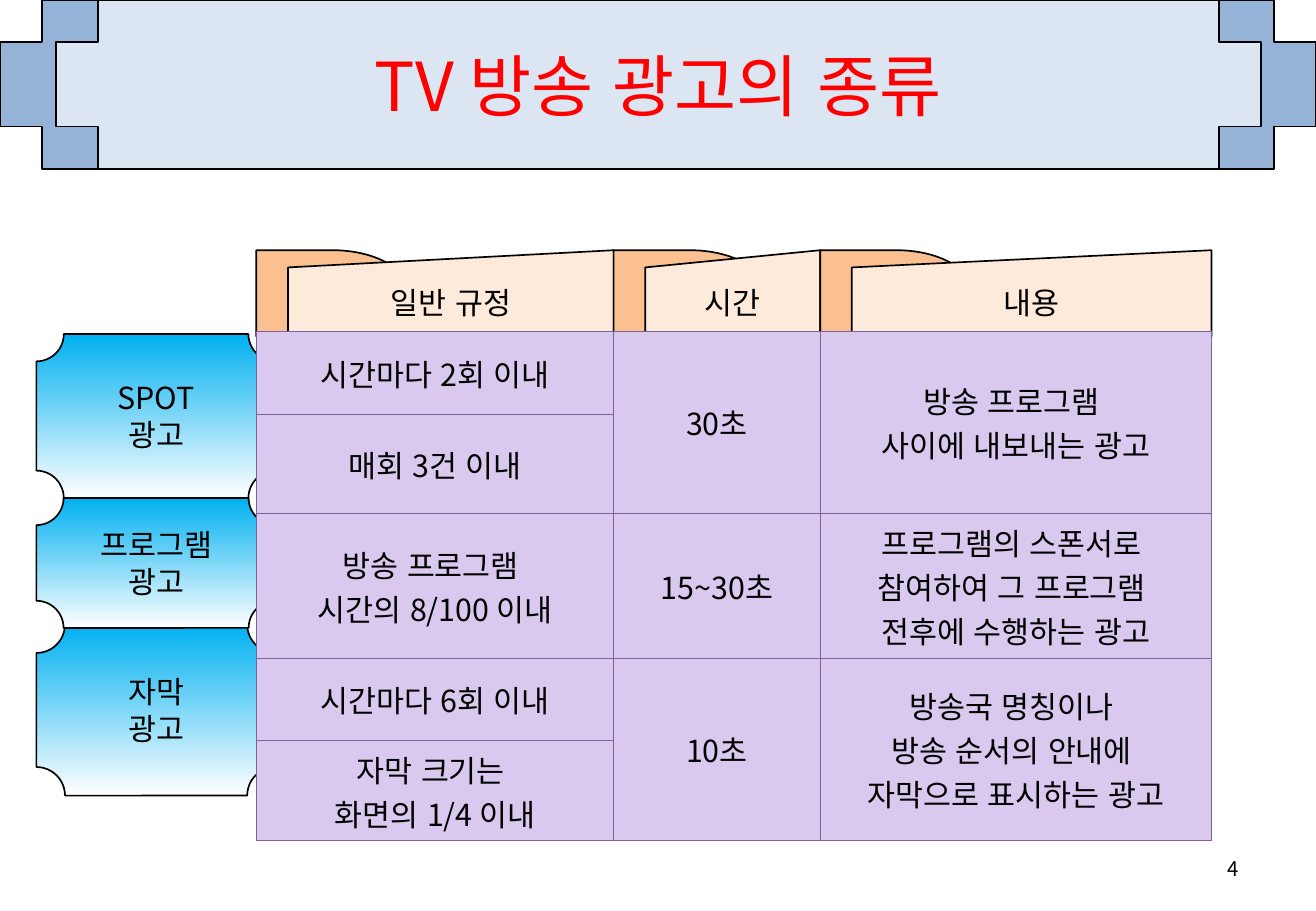
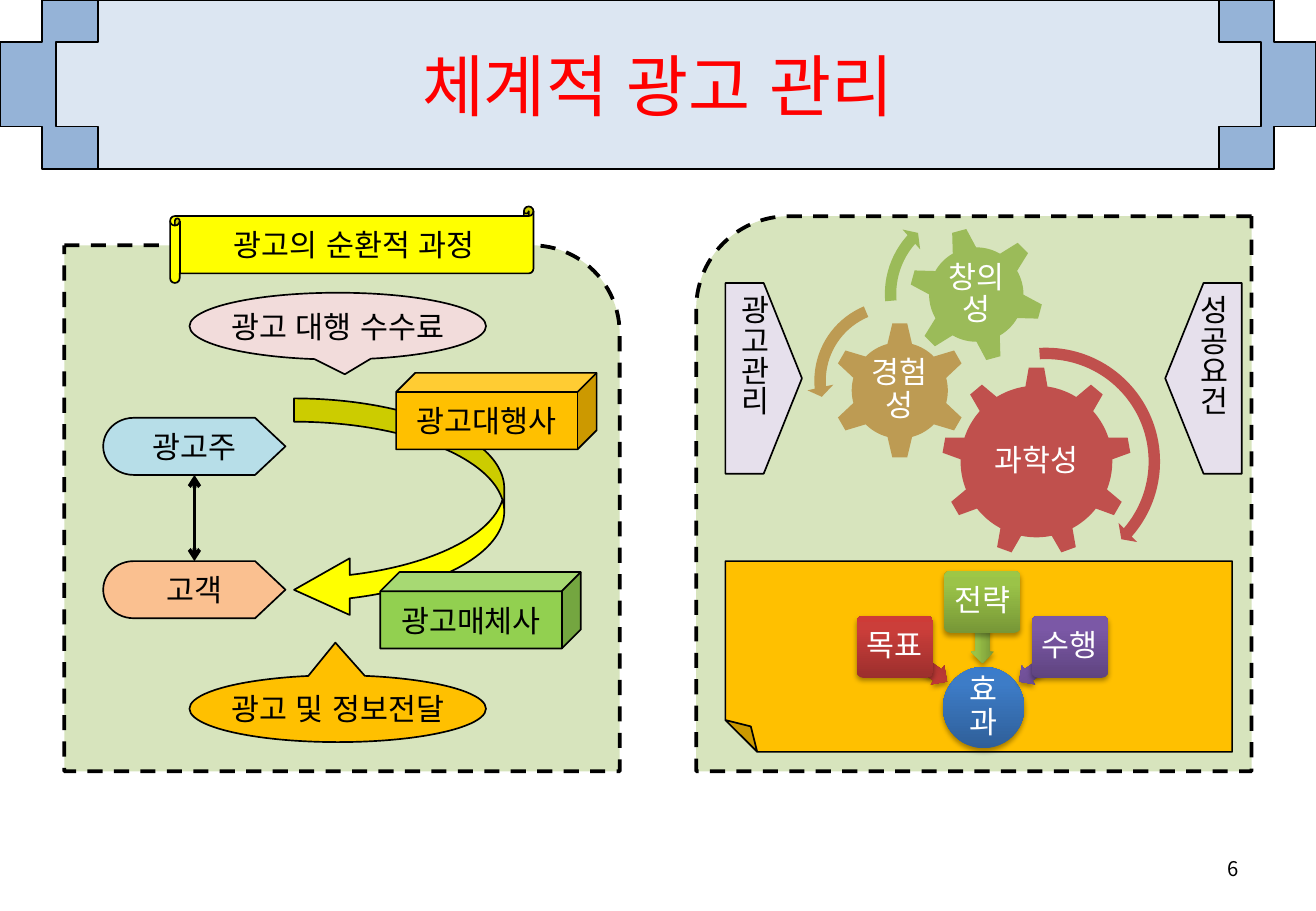
from dataclasses import dataclass
from typing import Any

from lxml.etree import SubElement
from pptx import Presentation
from pptx.dml.color import RGBColor
from pptx.enum.dml import MSO_LINE
from pptx.enum.lang import MSO_LANGUAGE_ID
from pptx.enum.shapes import MSO_CONNECTOR, MSO_SHAPE as S
from pptx.enum.text import MSO_ANCHOR, PP_ALIGN
from pptx.oxml.ns import qn
from pptx.util import Inches, Pt

FONT = "Noto Sans CJK KR"
COLOURS = {
    "black": "000000", "white": "FFFFFF", "title": "FF0000",
    "band_back": "95B3D7", "band": "DCE6F2",
    "orange": "FAC090", "cream": "FDEADA", "cell": "D9C9EE", "border": "7D60A0",
    "panel": "D7E4BD", "yellow": "FFFF00", "pink": "F2DCDB",
    "aqua": "B7DEE8", "gold": "FFC000", "lime": "92D050", "lilac": "E6E0EC",
    "gear_red": "C0504D", "gear_tan": "BD9B53", "gear_green": "9BBB59",
}
GRADIENTS = {
    "sky": (90, [(0, "00B0F0"), (100, "FFFFFF")]),
    "blue": (270, [(0, "2F5F99"), (80, "3D7CC7"), (100, "3A7CCB")]),
    "red": (270, [(0, "9C2F2D"), (80, "CB3E3A"), (100, "CE3B37")]),
    "green": (270, [(0, "779737"), (80, "9BC348"), (100, "9DC746")]),
    "purple": (270, [(0, "5F4480"), (80, "7B58A6"), (100, "7C57A8")]),
}


def colour(name):
    return RGBColor.from_string(COLOURS[name])


def write(frame, text, size=18, ink="black", align=PP_ALIGN.CENTER, spacing=None):
    """Fill a text frame, one paragraph for each line of text."""
    for index, line in enumerate(text.split("\n")):
        para = frame.add_paragraph() if index else frame.paragraphs[0]
        para.alignment = align
        if spacing:
            para.line_spacing = spacing
        span = para.add_run()
        span.text = line
        span.font.size = Pt(size)
        span.font.color.rgb = colour(ink)
        span.font.name = FONT
        span.font.language_id = MSO_LANGUAGE_ID.KOREAN
        SubElement(span.font._element, qn("a:ea"), typeface=FONT)


def set_inset(frame, inset):
    frame.margin_left = frame.margin_right = Inches(inset)
    frame.margin_top = frame.margin_bottom = Inches(inset)


def paint_gradient(shape, name):
    angle, stops = GRADIENTS[name]
    shape.fill.gradient()
    shape.fill.gradient_angle = 360 - angle
    stop_list = shape.element.spPr.find(qn("a:gradFill")).find(qn("a:gsLst"))
    for stop in list(stop_list):
        stop_list.remove(stop)
    for position, value in stops:
        stop = SubElement(stop_list, qn("a:gs"), pos=str(position * 1000))
        SubElement(stop, qn("a:srgbClr"), val=value)


def add_shadow(shape):
    effects = shape.element.spPr.find(qn("a:effectLst"))
    shadow = SubElement(effects, qn("a:outerShdw"), blurRad=str(Pt(3.1)),
                        dist=str(Pt(1.8)), dir="5400000", rotWithShape="0")
    tint = SubElement(shadow, qn("a:srgbClr"), val=COLOURS["black"])
    SubElement(tint, qn("a:alpha"), val="35000")


@dataclass
class Region:
    """A part of a slide; everything in it is placed from its top left corner."""
    shapes: Any
    left: float = 0
    top: float = 0

    def place(self, x, y, w, h):
        return Inches(self.left + x), Inches(self.top + y), Inches(w), Inches(h)

    def shape(self, kind, x, y, w, h, fill=None, gradient=None, line=1, adjust=(),
              flip=False, turn=0):
        shape = self.shapes.add_shape(kind, *self.place(x, y, w, h))
        shape.shadow.inherit = False
        if gradient:
            paint_gradient(shape, gradient)
        else:
            shape.fill.solid()
            shape.fill.fore_color.rgb = colour(fill)
        if line:
            shape.line.color.rgb = colour("black")
            shape.line.width = Pt(line)
        else:
            shape.line.fill.background()
        for index, value in enumerate(adjust):
            shape.adjustments[index] = value
        if flip:
            shape.element.spPr.xfrm.set("flipH", "1")
        shape.rotation = turn
        return shape

    def label(self, kind, x, y, w, h, fill, text, wrap=False, **style):
        shape = self.shape(kind, x, y, w, h, fill, **style)
        shape.text_frame.word_wrap = wrap
        shape.text_frame.vertical_anchor = MSO_ANCHOR.MIDDLE
        write(shape.text_frame, text)
        return shape

    def text(self, x, y, w, h, text, inset=None, **style):
        frame = self.shapes.add_textbox(*self.place(x, y, w, h)).text_frame
        frame.word_wrap = True
        frame.vertical_anchor = MSO_ANCHOR.MIDDLE
        if inset is not None:
            set_inset(frame, inset)
        write(frame, text, **style)


def add_page(deck, title, number):
    page = deck.slides.add_slide(deck.slide_layouts[6])
    frame = Region(page.shapes)
    frame.shape(S.CROSS, 0, 0, 10.83, 1.39, "band_back")
    frame.shape(S.CROSS, 0.46, 0, 9.92, 1.39, "band")
    frame.text(0.54, 0.07, 9.75, 1.25, title, size=40, ink="title")
    frame.text(7.76, 6.95, 2.53, 0.4, str(number), size=12, align=PP_ALIGN.RIGHT)
    return page


def draw_column_heads(region, heads, widths):
    x = 0
    for head, width in zip(heads, widths):
        region.shape(S.FLOWCHART_DELAY, x, 0, 1.26, 0.71, "orange")
        region.label(S.FLOWCHART_MANUAL_INPUT, x + 0.26, 0, width - 0.26, 0.71,
                     "cream", head, wrap=True)
        x += width


def draw_row_heads(region):
    for text, y, height, notch in (("SPOT\n광고", 0, 1.35, 0.167),
                                   ("자막\n광고", 2.39, 1.41, 0.167),
                                   ("프로그램\n광고", 1.35, 1.07, 0.209)):
        region.label(S.PLAQUE, 0, y, 1.97, height, None, text, wrap=True,
                     gradient="sky", adjust=[notch])


def style_cell(cell):
    cell.fill.solid()
    cell.fill.fore_color.rgb = colour("cell")
    cell.vertical_anchor = MSO_ANCHOR.MIDDLE
    props = cell._tc.get_or_add_tcPr()
    for index, side in enumerate(("lnL", "lnR", "lnT", "lnB")):
        edge = props.makeelement(qn("a:" + side), {"w": str(Pt(0.75))})
        props.insert(index, edge)
        paint = SubElement(edge, qn("a:solidFill"))
        SubElement(paint, qn("a:srgbClr"), val=COLOURS["border"])


def draw_rules_table(region, widths):
    heights = [0.68, 0.82, 1.19, 0.68, 0.82]
    rows = [
        ["시간마다 2회 이내", "30초", "방송 프로그램 \n사이에 내보내는 광고"],
        ["매회 3건 이내"],
        ["방송 프로그램 \n시간의 8/100 이내", "15~30초",
         "프로그램의 스폰서로 \n참여하여 그 프로그램 \n전후에 수행하는 광고"],
        ["시간마다 6회 이내", "10초",
         "방송국 명칭이나 \n방송 순서의 안내에 \n자막으로 표시하는 광고"],
        ["자막 크기는 \n화면의 1/4 이내"],
    ]
    table = region.shapes.add_table(
        len(rows), len(widths),
        *region.place(0, 0, sum(widths), sum(heights))).table
    table.first_row = table.horz_banding = False
    for column, width in zip(table.columns, widths):
        column.width = Inches(width)
    for row, height in zip(table.rows, heights):
        row.height = Inches(height)
        for cell in row.cells:
            style_cell(cell)
    for first in (0, 3):
        for column in (1, 2):
            table.cell(first, column).merge(table.cell(first + 1, column))
    for row, texts in enumerate(rows):
        for column, text in enumerate(texts):
            write(table.cell(row, column).text_frame, text)


def draw_cycle_panel(region):
    region.shape(S.ROUND_1_RECTANGLE, 0, 0, 4.57, 4.33, "panel",
                 line=2.25).line.dash_style = MSO_LINE.DASH
    region.label(S.HORIZONTAL_SCROLL, 0.87, -0.32, 2.99, 0.63, "yellow",
                 "광고의 순환적 과정")
    for text, y, fill, tip in (("광고 대행 수수료", 0.39, "pink", (0.024, 0.721)),
                               ("광고 및 정보전달", 3.54, "gold", (-0.008, -0.99))):
        region.label(S.OVAL_CALLOUT, 1.03, y, 2.44, 0.55, fill, text, adjust=tip)
    for text, y, fill in (("광고주", 1.42, "aqua"), ("고객", 2.6, "orange")):
        region.label(S.FLOWCHART_DISPLAY, 0.32, y, 1.5, 0.47, fill, text, flip=True)

    start = region.place(1.07, 1.89, 0, 0.71)
    link = region.shapes.add_connector(MSO_CONNECTOR.STRAIGHT, start[0], start[1],
                                       start[0], start[1] + start[3])
    link.line.color.rgb = colour("black")
    link.line.width = Pt(2.25)
    for end in ("headEnd", "tailEnd"):
        SubElement(link.line._get_or_add_ln(), qn("a:" + end), type="arrow")
    SubElement(link._element.spPr, qn("a:effectLst"))

    region.shape(S.CURVED_LEFT_ARROW, 1.89, 1.26, 1.73, 1.81, "yellow",
                 adjust=(0.111, 0.27, 0.265))
    for text, x, y, fill in (("광고대행사", 2.73, 1.05, "gold"),
                             ("광고매체사", 2.6, 2.69, "lime")):
        region.label(S.CUBE, x, y, 1.65, 0.63, fill, text)


def draw_gears(region):
    for kind, fill, x, y, size, turn, text, w, h in (
            (S.GEAR_9, "gear_red", 0.91, 1.15, 1.56, 0, "과학성", 0.93, 0.8),
            (S.GEAR_6, "gear_tan", 0, 0.78, 1.13, 0, "경험성", 0.56, 0.56),
            (S.GEAR_6, "gear_green", 0.64, 0, 1.11, 345, "창의성", 0.62, 0.62)):
        region.shape(kind, x, y, size, size, fill, line=0, turn=turn)
        region.text(x + (size - w) / 2, y + (size - h) / 2, w, h, text,
                    inset=0.03, ink="white", spacing=0.9)
    for kind, fill, x, y, size, adjust in (
            (S.CIRCULAR_ARROW, "gear_red", 0.77, 0.93, 2,
             (0.047, 2.99, 24.595, 159.892, 0.055)),
            (S.LEFT_CIRCULAR_ARROW, "gear_tan", -0.2, 0.54, 1.45,
             (0.065, 4.3, 104.891, 148.378, 0.075)),
            (S.CIRCULAR_ARROW, "gear_green", 0.38, -0.23, 1.56,
             (0.06, 3.941, 133.138, 105.082, 0.07))):
        region.shape(kind, x, y, size, size, fill, line=0, adjust=adjust)


def draw_effect_diagram(region):
    def glossy(kind, x, y, w, h, gradient, text=None, inset=0.04, **style):
        shape = region.shape(kind, x, y, w, h, gradient=gradient, line=0, **style)
        add_shadow(shape)
        if text:
            shape.text_frame.word_wrap = True
            shape.text_frame.vertical_anchor = MSO_ANCHOR.MIDDLE
            set_inset(shape.text_frame, inset)
            write(shape.text_frame, text, ink="white", spacing=0.9)

    glossy(S.OVAL, 0.71, 0.79, 0.67, 0.67, "blue", "효과", inset=0.01)
    for index, (text, gradient, y, arrow_x, arrow_y, turn) in enumerate((
            ("목표", "red", 0.37, 0.28, 0.67, 215),
            ("전략", "green", 0, 0.78, 0.41, 270),
            ("수행", "purple", 0.37, 1.29, 0.67, 325))):
        glossy(S.LEFT_ARROW, arrow_x, arrow_y, 0.51, 0.19, gradient,
               adjust=(0.6, 0.5), turn=turn)
        glossy(S.ROUNDED_RECTANGLE, index * 0.72, y, 0.63, 0.51, gradient, text,
               adjust=[0.1])


def draw_management_panel(region):
    region.shape(S.ROUND_1_RECTANGLE, 0, 0, 4.57, 4.57, "panel", line=2.25,
                 flip=True).line.dash_style = MSO_LINE.DASH
    draw_gears(Region(region.shapes, region.left + 1.11, region.top + 0.09))
    for text, x, flip in (("광고관리", 0.24, False), ("성공요건", 3.86, True)):
        side = region.label(S.PENTAGON, x, 0.55, 0.63, 1.57, "lilac", text, flip=flip)
        side.text_frame._txBody.bodyPr.set("vert", "eaVert")
    region.shape(S.FOLDED_CORNER, 0.24, 2.84, 4.17, 1.57, "gold", flip=True)
    draw_effect_diagram(Region(region.shapes, region.left + 1.32, region.top + 2.92))


def main():
    deck = Presentation()
    deck.slide_width, deck.slide_height = Inches(10.83), Inches(7.5)

    kinds = add_page(deck, "TV 방송 광고의 종류", 4)
    widths = [2.94, 1.7, 3.22]
    draw_column_heads(Region(kinds.shapes, 2.11, 2.06), ["일반 규정", "시간", "내용"], widths)
    draw_row_heads(Region(kinds.shapes, 0.3, 2.75))
    draw_rules_table(Region(kinds.shapes, 2.11, 2.73), widths)

    control = add_page(deck, "체계적 광고 관리", 6)
    draw_cycle_panel(Region(control.shapes.add_group_shape().shapes, 0.53, 2.02))
    draw_management_panel(Region(control.shapes.add_group_shape().shapes, 5.73, 1.78))
    deck.save("out.pptx")


if __name__ == "__main__":
    main()
